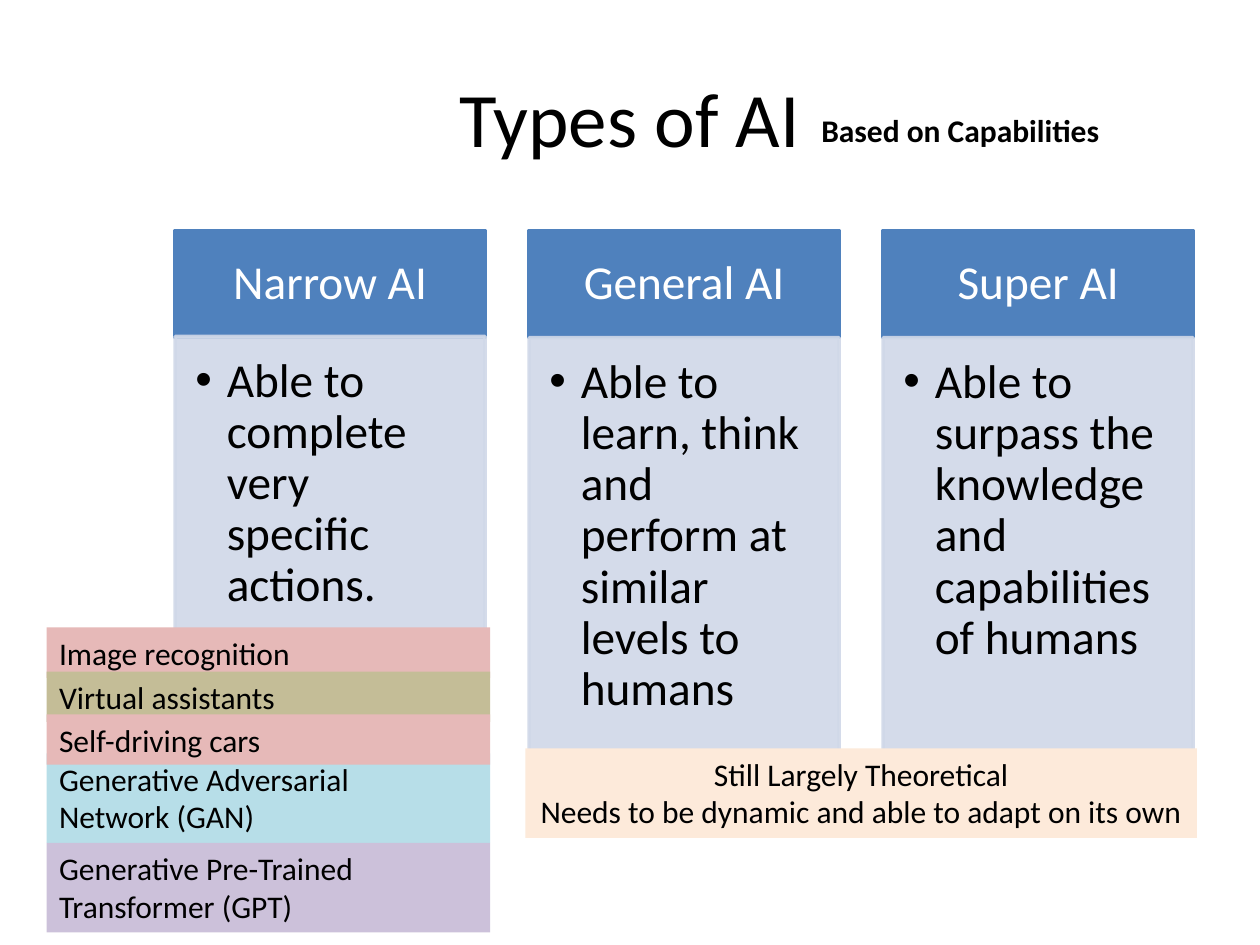
"""Build a slide on the types of AI, grouped by capability."""
from dataclasses import dataclass

from lxml import etree
from pptx import Presentation
from pptx import util as u
from pptx.dml.color import RGBColor
from pptx.enum import shapes, text
from pptx.oxml.ns import qn

BLACK = RGBColor(0x00, 0x00, 0x00)
WHITE = RGBColor(0xFF, 0xFF, 0xFF)
BLUE = RGBColor(0x4F, 0x81, 0xBD)
PALE_BLUE = RGBColor(0xD0, 0xD8, 0xE8)
ROSE = RGBColor(0xE6, 0xB9, 0xB8)
AQUA = RGBColor(0xB7, 0xDE, 0xE8)
TAN = RGBColor(0xC4, 0xBD, 0x97)
PEACH = RGBColor(0xFD, 0xEA, 0xDA)
LILAC = RGBColor(0xCC, 0xC1, 0xDA)

FONT = "Calibri"
LEFT = text.PP_ALIGN.LEFT
CENTER = text.PP_ALIGN.CENTER
TOP = text.MSO_ANCHOR.TOP
MIDDLE = text.MSO_ANCHOR.MIDDLE

COLUMN_LEFT, COLUMN_PITCH, COLUMN_WIDTH = 1.39, 2.81, 2.46
HEADER_TOP, HEADER_HEIGHT, BODY_HEIGHT = 1.83, 0.85, 3.32
NOTE_MARGINS = (0.1, 0.05, 0.1, 0.05)


@dataclass(frozen=True)
class Column:
    heading: str
    body: str
    body_top: float = 2.68


@dataclass(frozen=True)
class Note:
    words: str
    top: float
    height: float
    fill: RGBColor
    left: float = 0.37
    width: float = 3.52
    align: text.PP_ALIGN = LEFT


COLUMNS = (
    Column("Narrow AI", "Able to complete very specific actions.", 2.67),
    Column("General AI", "Able to learn, think and perform at similar levels to humans"),
    Column("Super AI", "Able to surpass the knowledge and capabilities of humans"),
)

NOTES = (
    Note("Image recognition", 4.98, 0.4, ROSE),
    Note("Generative Adversarial\nNetwork (GAN)", 5.98, 0.71, AQUA),
    Note("Still Largely Theoretical\nNeeds to be dynamic and able to adapt on its own",
         5.94, 0.71, PEACH, left=4.17, width=5.33, align=CENTER),
    Note("Virtual assistants", 5.33, 0.4, TAN),
    Note("Self-driving cars\u00a0", 5.67, 0.4, ROSE),
    Note("Generative Pre-Trained\nTransformer (GPT)", 6.69, 0.71, LILAC),
)


def write_text(box, words: str, *, size: float = 18, color: RGBColor = BLACK,
               bold: bool = False, align=LEFT, anchor=TOP, margins=NOTE_MARGINS,
               spacing: float = 1.0, bullet: bool = False, wrap: bool = True) -> None:
    frame = box.text_frame
    frame.text = words
    frame.word_wrap = wrap
    frame.vertical_anchor = anchor
    (frame.margin_left, frame.margin_top,
     frame.margin_right, frame.margin_bottom) = map(u.Inches, margins)
    for para in frame.paragraphs:
        para.alignment = align
        para.line_spacing = spacing
        if bullet:
            add_bullet(para)
        for span in para.runs:
            span.font.name = FONT
            span.font.size = u.Pt(size)
            span.font.bold = bold
            span.font.color.rgb = color


def add_bullet(para) -> None:
    para.level = 1
    properties = para._p.get_or_add_pPr()
    properties.set("marL", str(u.Inches(0.25)))
    properties.set("indent", str(-u.Inches(0.25)))
    etree.SubElement(properties, qn("a:buFont"), typeface="Arial")
    etree.SubElement(properties, qn("a:buChar"), char="•")


def add_panel(page, left: float, top: float, width: float, height: float,
              fill: RGBColor, *, outlined: bool = False, opacity: int = 100):
    panel = page.shapes.add_shape(shapes.MSO_SHAPE.RECTANGLE,
                                  *map(u.Inches, (left, top, width, height)))
    panel.shadow.inherit = False
    panel.fill.solid()
    panel.fill.fore_color.rgb = fill
    if outlined:
        panel.line.color.rgb = fill
        panel.line.width = u.Pt(2)
    else:
        panel.line.fill.background()
    if opacity < 100:
        for color in panel._element.spPr.iter(qn("a:srgbClr")):
            etree.SubElement(color, qn("a:alpha"), val=str(opacity * 1000))
    return panel


def add_column(page, column: Column, left: float) -> None:
    header = add_panel(page, left, HEADER_TOP, COLUMN_WIDTH, HEADER_HEIGHT,
                       BLUE, outlined=True)
    write_text(header, column.heading, size=27, color=WHITE, align=CENTER,
               anchor=MIDDLE, margins=(0.21, 0.12, 0.21, 0.12), spacing=0.9)
    body = add_panel(page, left, column.body_top, COLUMN_WIDTH, BODY_HEIGHT,
                     PALE_BLUE, outlined=True, opacity=90)
    write_text(body, column.body, size=27, margins=(0.16, 0.16, 0.21, 0.24),
               spacing=0.9, bullet=True)


def add_note(page, note: Note) -> None:
    panel = add_panel(page, note.left, note.top, note.width, note.height, note.fill)
    write_text(panel, note.words, align=note.align)


def main() -> None:
    deck = Presentation()
    deck.slide_width, deck.slide_height = u.Inches(10), u.Inches(7.5)
    page = deck.slides.add_slide(deck.slide_layouts[5])

    title = page.shapes.title
    title.left, title.top = u.Inches(0.5), u.Inches(0.3)
    title.width, title.height = u.Inches(9), u.Inches(1.25)
    write_text(title, "Types of AI", size=44, align=CENTER, anchor=MIDDLE)

    for index, column in enumerate(COLUMNS):
        add_column(page, column, COLUMN_LEFT + index * COLUMN_PITCH)

    subtitle = page.shapes.add_textbox(*map(u.Inches, (6.42, 0.83, 2.43, 0.4)))
    write_text(subtitle, "Based on Capabilities", bold=True, wrap=False)

    for note in NOTES:
        add_note(page, note)

    deck.save("out.pptx")


if __name__ == "__main__":
    main()
